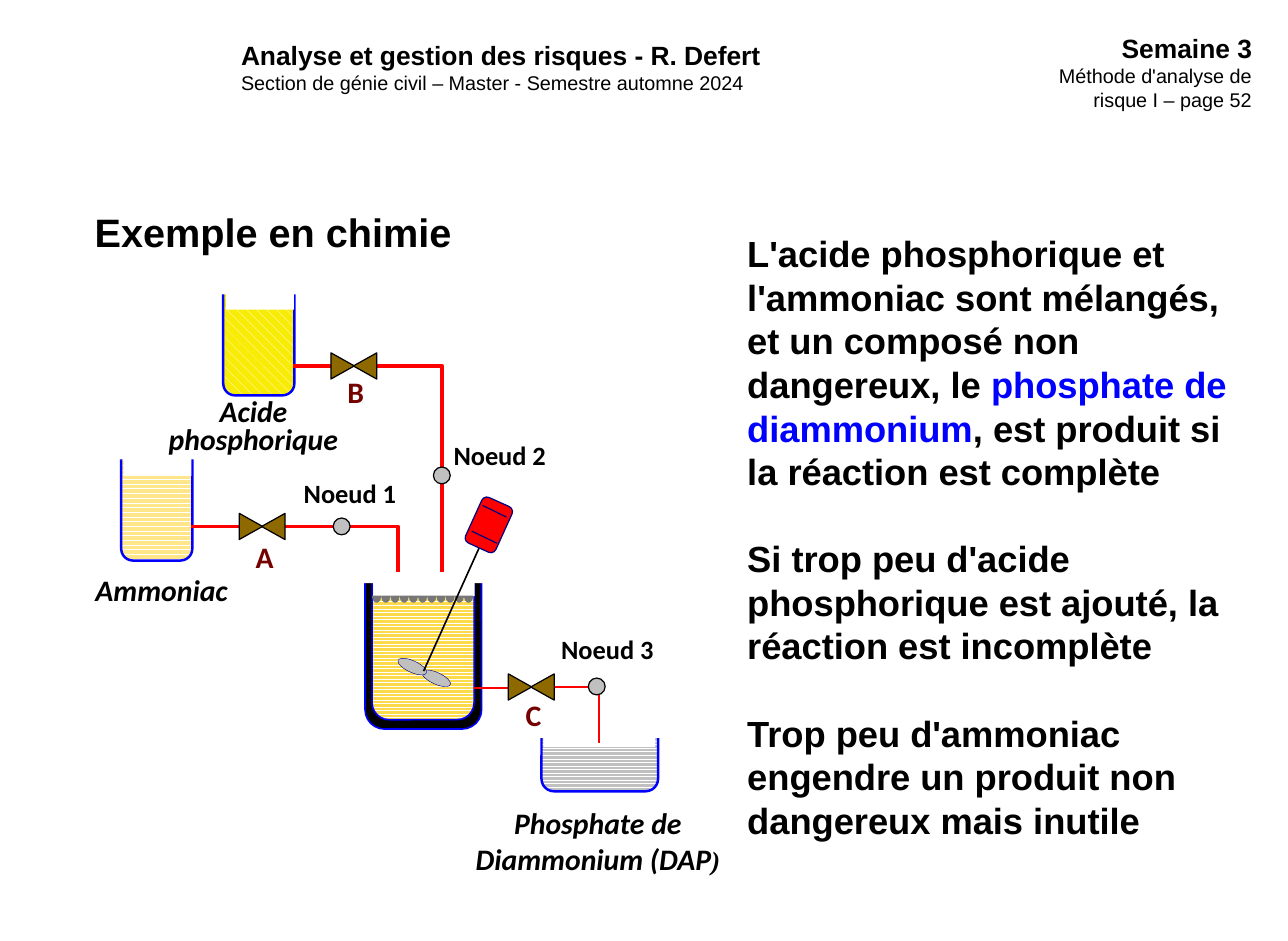
"""Build the slide describing the diammonium phosphate process."""
import math
from dataclasses import dataclass
from typing import Any, Optional

import pptx
import pptx.dml.color
import pptx.enum.dml
import pptx.enum.shapes
import pptx.enum.text
import pptx.oxml.ns
import pptx.util
from lxml import etree

Cm = pptx.util.Cm
Pt = pptx.util.Pt
RGBColor = pptx.dml.color.RGBColor
Align = pptx.enum.text.PP_ALIGN
Pattern = pptx.enum.dml.MSO_PATTERN
Preset = pptx.enum.shapes.MSO_SHAPE

BLACK = RGBColor(0x00, 0x00, 0x00)
WHITE = RGBColor(0xFF, 0xFF, 0xFF)
BLUE = RGBColor(0x00, 0x00, 0xFF)
NAVY = RGBColor(0x00, 0x00, 0x80)
RED = RGBColor(0xFF, 0x00, 0x00)
MAROON = RGBColor(0x74, 0x00, 0x00)
BROWN = RGBColor(0x8E, 0x69, 0x00)
SILVER = RGBColor(0xC0, 0xC0, 0xC0)
FROTH_GREY = RGBColor(0x77, 0x77, 0x77)
ACID_YELLOW = RGBColor(0xF8, 0xEC, 0x06)
AMMONIA_YELLOW = RGBColor(0xFF, 0xE6, 0x89)
MIXTURE_YELLOW = RGBColor(0xFC, 0xDA, 0x4A)

HEADING = {"name": "Arial", "size": Pt(16), "bold": True}
SUBHEADING = {"name": "Arial", "size": Pt(12), "bold": False}
TITLE = {"name": "Arial", "size": Pt(24), "bold": True}
BODY = {"name": "Arial", "size": Pt(22), "bold": True}
VALVE_NAME = {"name": "Calibri", "size": Pt(18), "bold": True}
PRODUCT = {**VALVE_NAME, "italic": True}
BRACKET = {**PRODUCT, "name": "Times New Roman", "size": Pt(16)}
NODE_NAME = {"name": "Calibri", "size": Pt(16), "bold": True}

Box = tuple[float, float, float, float]
Point = tuple[float, float]


@dataclass
class Part:
    box: Box
    fill: RGBColor = WHITE
    line: Optional[RGBColor] = None
    width: float = 0.75
    preset: Any = Preset.RECTANGLE
    pattern: Any = None
    rotation: float = 0


@dataclass
class Run:
    text: str
    values: dict[str, Any]
    color: RGBColor = BLACK


@dataclass
class Label:
    box: Box
    paragraphs: list[list[Run]]
    align: Any = Align.LEFT
    spacing: float = 1.0
    wrap: bool = True


@dataclass
class Pipe:
    points: list[Point]
    width: float = 2.25
    color: RGBColor = RED


ROUNDED = Preset.ROUNDED_RECTANGLE
VESSELS = [
    Part((4.77, 6.01, 1.52, 2.44), ACID_YELLOW, BLUE, 1.5, ROUNDED, Pattern.DASHED_DOWNWARD_DIAGONAL),
    Part((4.6, 5.76, 1.88, 0.53)),
    Part((2.59, 9.54, 1.52, 2.44), AMMONIA_YELLOW, BLUE, 1.5, ROUNDED, Pattern.WAVE),
    Part((2.41, 9.29, 1.88, 0.53)),
    Part((7.8, 12, 2.49, 3.58), BLACK, BLUE, 1, ROUNDED),
    Part((7.95, 12.03, 2.18, 3.35), MIXTURE_YELLOW, BLUE, 1, ROUNDED, Pattern.ZIG_ZAG),
    Part((7.7, 11.88, 2.74, 0.58)),
    Part((2.64, 9.64, 1.45, 0.53)),
    Part((4.83, 5.98, 1.45, 0.64)),
    Part((7.98, 12.28, 2.16, 0.46)),
    Part((11.57, 15.31, 2.49, 1.6), SILVER, BLUE, 1.5, ROUNDED, Pattern.ZIG_ZAG),
    Part((11.38, 15.26, 2.82, 0.51)),
    Part((11.61, 15.66, 2.39, 0.3)),
]
PIPES = [
    Pipe([(11.07, 14.7), (10.13, 14.7)], 1.5),
    Pipe([(11.79, 14.68), (12.8, 14.68), (12.8, 15.87)], 1.5),
    Pipe([(7.09, 7.82), (6.27, 7.82)]),
    Pipe([(8.03, 7.82), (9.44, 7.82), (9.44, 12.23)]),
    Pipe([(5.21, 11.25), (4.09, 11.25)]),
    Pipe([(6.07, 11.25), (8.5, 11.25), (8.5, 12.23)]),
]
VALVES = [(11.35, 14.68), (7.56, 7.82), (5.6, 11.25)]
NODES = [(12.57, 14.49), (9.26, 9.98), (7.12, 11.07)]
BLADES = [(8.99, 14.37), (8.48, 14.12)]
STIRRER_ROD = Pipe([(9.05, 14.34), (10.28, 11.61)], 1, BLACK)
MOTOR = Part((9.91, 10.86, 1.07, 0.71), RED, NAVY, 0.75, ROUNDED, rotation=294.4)
MOTOR_BANDS = [
    Pipe([(10.31, 10.8), (10.82, 11.05)], 0.75, NAVY),
    Pipe([(10.08, 11.35), (10.62, 11.61)], 0.75, NAVY),
]
LABELS = [
    Label((4.9, 0.71, 14.99, 1.45), [
        [Run("Analyse et gestion des risques - R. Defert", HEADING)],
        [Run("Section de génie civil – Master - Semestre automne 2024", SUBHEADING)]]),
    Label((21.51, 0.56, 5.49, 1.96), [
        [Run("Semaine 3", HEADING)],
        [Run("Méthode d'analyse de risque I – page 52", SUBHEADING)]], Align.RIGHT),
    Label((5.21, 11.38, 0.89, 1.02), [[Run("A", VALVE_NAME, MAROON)]], wrap=False),
    Label((7.17, 7.87, 0.86, 1.02), [[Run("B", VALVE_NAME, MAROON)]], wrap=False),
    Label((10.98, 14.76, 0.86, 1.02), [[Run("C", VALVE_NAME, MAROON)]], wrap=False),
    Label((1.79, 12.09, 3.38, 1.02), [[Run("Ammoniac", PRODUCT)]], wrap=False),
    Label((3.28, 8.41, 4.27, 1.47), [[Run("Acide phosphorique", PRODUCT)]], Align.CENTER, 0.8),
    Label((9.75, 17.08, 6.05, 1.8), [
        [Run("Phosphate de Diammonium (DAP", PRODUCT), Run(")", BRACKET)]], Align.CENTER),
    Label((6.24, 10.2, 2.57, 0.81), [[Run("Noeud 1", NODE_NAME)]], spacing=0.8),
    Label((9.44, 9.4, 2.57, 0.81), [[Run("Noeud 2", NODE_NAME)]], spacing=0.8),
    Label((11.74, 13.53, 2.57, 0.81), [[Run("Noeud 3", NODE_NAME)]], spacing=0.8),
]
TITLE_LABEL = Label((1.77, 4.32, 12.9, 1.27), [[Run("Exemple en chimie", TITLE)]])
BODY_LABEL = Label((15.71, 4.82, 11.23, 13.41), [
    [Run("L'acide phosphorique et l'ammoniac sont mélangés, et un composé non dangereux, le ", BODY),
     Run("phosphate de diammonium", BODY, BLUE),
     Run(", est produit si la réaction est complète", BODY)],
    [Run("Si trop peu d'acide phosphorique est ajouté, la réaction est incomplète", BODY)],
    [Run("Trop peu d'ammoniac engendre un produit non dangereux mais inutile", BODY)],
])


def apply_format(target: Any, values: dict[str, Any]) -> None:
    for name, value in values.items():
        setattr(target, name, value)


def write_label(shape: Any, label: Label, gap: float = 0) -> None:
    apply_format(shape, dict(zip(("left", "top", "width", "height"), map(Cm, label.box))))
    frame = shape.text_frame
    apply_format(frame, {"word_wrap": label.wrap, "auto_size": pptx.enum.text.MSO_AUTO_SIZE.NONE,
                         "vertical_anchor": pptx.enum.text.MSO_ANCHOR.TOP})
    for index, runs in enumerate(label.paragraphs):
        paragraph = frame.add_paragraph() if index else frame.paragraphs[0]
        apply_format(paragraph, {"alignment": label.align, "line_spacing": label.spacing,
                                 "space_before": Pt(gap if index else 0)})
        for item in runs:
            run = paragraph.add_run()
            run.text = item.text
            apply_format(run.font, item.values)
            run.font.color.rgb = item.color


def remove_bullets(shape: Any) -> None:
    for paragraph in shape.text_frame.paragraphs:
        properties = paragraph._p.get_or_add_pPr()
        properties.set("marL", "0")
        properties.set("indent", "0")
        etree.SubElement(properties, pptx.oxml.ns.qn("a:buNone"))


def draw_part(shapes: Any, part: Part) -> None:
    shape = shapes.add_shape(part.preset, *map(Cm, part.box))
    shape.shadow.inherit = False
    shape.rotation = part.rotation
    if part.pattern is None:
        shape.fill.solid()
        shape.fill.fore_color.rgb = part.fill
    else:
        shape.fill.patterned()
        shape.fill.pattern = part.pattern
        shape.fill.fore_color.rgb = WHITE
        shape.fill.back_color.rgb = part.fill
    if part.line is None:
        shape.line.fill.background()
    else:
        shape.line.color.rgb = part.line
        shape.line.width = Pt(part.width)


def draw_outline(shapes: Any, points: list[Point], close: bool) -> Any:
    corners = [(Cm(x), Cm(y)) for x, y in points]
    builder = shapes.build_freeform(*corners[0])
    builder.add_line_segments(corners[1:], close=close)
    shape = builder.convert_to_shape()
    shape.shadow.inherit = False
    return shape


def draw_pipe(shapes: Any, pipe: Pipe) -> None:
    if len(pipe.points) == 2:
        ends = [Cm(value) for point in pipe.points for value in point]
        shape = shapes.add_connector(pptx.enum.shapes.MSO_CONNECTOR.STRAIGHT, *ends)
        etree.SubElement(shape._element.spPr, pptx.oxml.ns.qn("a:effectLst"))
    else:
        shape = draw_outline(shapes, pipe.points, False)
        shape.fill.background()
    shape.line.color.rgb = pipe.color
    shape.line.width = Pt(pipe.width)


def draw_froth(shapes: Any, left: float, top: float, width: float, count: int) -> None:
    radius, depth, steps = width / count / 2, 0.15, 12
    for bubble in range(count):
        center = left + (2 * bubble + 1) * radius
        angles = [math.pi * step / steps for step in range(steps + 1)]
        points = [(center + radius * math.cos(a), top + depth * math.sin(a)) for a in angles]
        shape = draw_outline(shapes, points, True)
        shape.fill.solid()
        shape.fill.fore_color.rgb = FROTH_GREY
        shape.line.fill.background()


def draw_valve(shapes: Any, center: Point) -> None:
    width, height, offset = 0.56, 0.5, 0.24
    for side, rotation in ((-1, 90), (1, 270)):
        box = (center[0] + side * offset - width / 2, center[1] - height / 2, width, height)
        draw_part(shapes, Part(box, BROWN, BLACK, preset=Preset.ISOSCELES_TRIANGLE, rotation=rotation))


def main() -> None:
    presentation = pptx.Presentation()
    apply_format(presentation, {"slide_width": Pt(780), "slide_height": Pt(570)})
    slide = presentation.slides.add_slide(presentation.slide_layouts[1])
    shapes = slide.shapes
    write_label(shapes.title, TITLE_LABEL)
    body = slide.placeholders[1]
    write_label(body, BODY_LABEL, 26.4)
    remove_bullets(body)
    for vessel in VESSELS:
        draw_part(shapes, vessel)
    draw_froth(shapes, 7.95, 12.73, 2.16, 11)
    for pipe in PIPES:
        draw_pipe(shapes, pipe)
    for center in VALVES:
        draw_valve(shapes, center)
    for blade in BLADES:
        draw_part(shapes, Part((*blade, 0.66, 0.25), SILVER, NAVY, 0.25, Preset.OVAL, rotation=24.4))
    draw_pipe(shapes, STIRRER_ROD)
    draw_part(shapes, MOTOR)
    for band in MOTOR_BANDS:
        draw_pipe(shapes, band)
    for node in NODES:
        draw_part(shapes, Part((*node, 0.36, 0.36), SILVER, BLACK, preset=Preset.OVAL))
    for label in LABELS:
        write_label(shapes.add_textbox(*map(Cm, label.box)), label)
    presentation.save("out.pptx")


if __name__ == "__main__":
    main()
